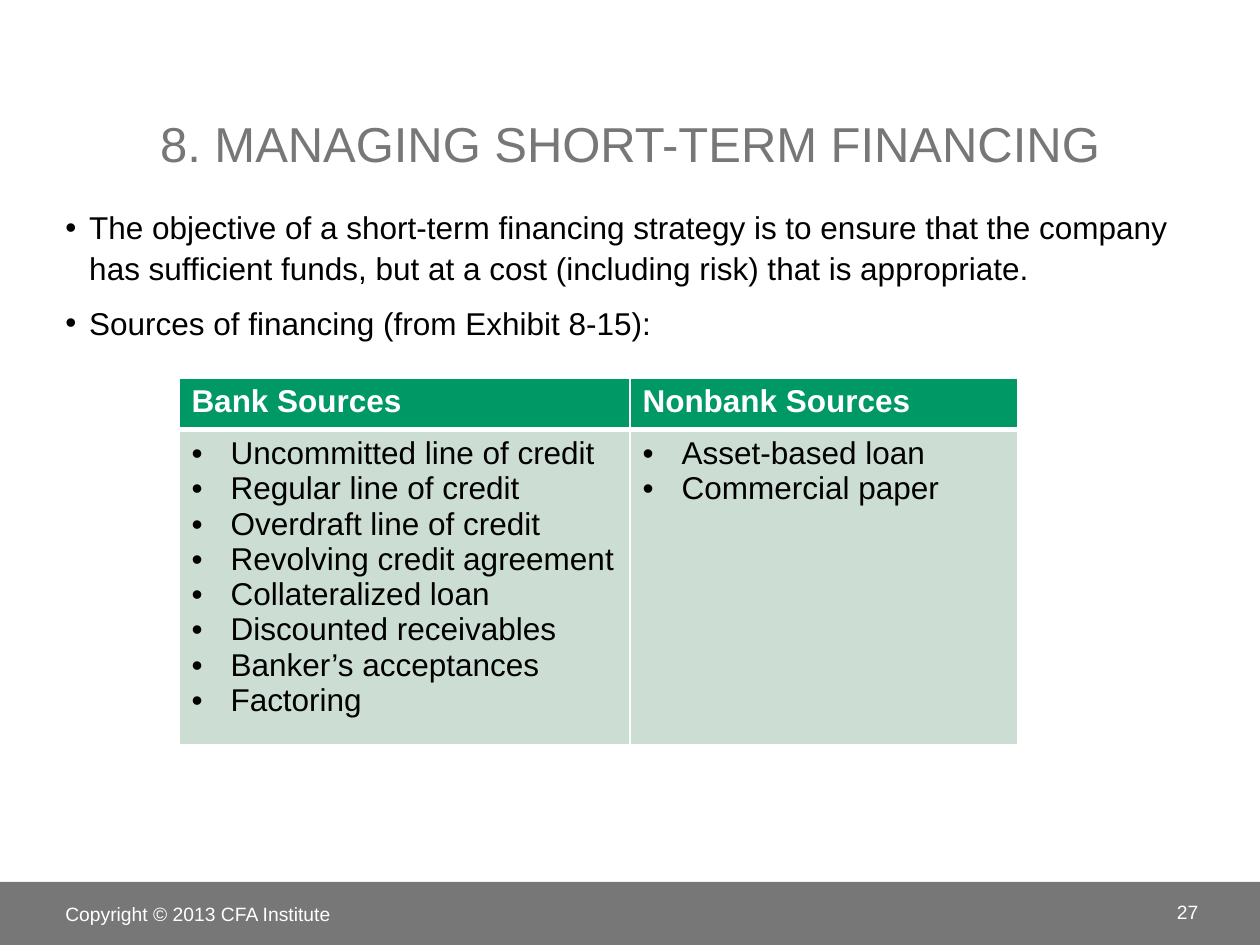
from lxml import etree
from pptx import Presentation
from pptx.dml.color import RGBColor
from pptx.enum.shapes import MSO_SHAPE
from pptx.enum.text import MSO_ANCHOR, MSO_AUTO_SIZE, PP_ALIGN
from pptx.oxml.ns import qn
from pptx.util import Inches, Pt

RECTANGLE = MSO_SHAPE.RECTANGLE
TOP, MIDDLE, BOTTOM = MSO_ANCHOR.TOP, MSO_ANCHOR.MIDDLE, MSO_ANCHOR.BOTTOM
LEFT, CENTER, RIGHT = PP_ALIGN.LEFT, PP_ALIGN.CENTER, PP_ALIGN.RIGHT

FONT = "Arial"
COLORS = {
    "gray": "777777",
    "text": "000000",
    "white": "FFFFFF",
    "header": "009966",
    "cell": "CCDED3",
}

OBJECTIVES = [
    "The objective of a short-term financing strategy is to ensure that the company "
    "has sufficient funds, but at a cost (including risk) that is appropriate.",
    "Sources of financing (from Exhibit 8-15):",
]
SOURCES = {
    "Bank Sources": [
        "Uncommitted line of credit",
        "Regular line of credit",
        "Overdraft line of credit",
        "Revolving credit agreement",
        "Collateralized loan",
        "Discounted receivables",
        "Banker’s acceptances",
        "Factoring",
    ],
    "Nonbank Sources": ["Asset-based loan", "Commercial paper"],
}


def color(name):
    return RGBColor.from_string(COLORS[name])


def add_bullet(paragraph, indent):
    """Hang a round bullet to the left of the paragraph."""
    properties = paragraph._p.get_or_add_pPr()
    properties.set("marL", str(indent))
    properties.set("indent", str(-indent))
    etree.SubElement(properties, qn("a:buFont")).set("typeface", FONT)
    etree.SubElement(properties, qn("a:buChar")).set("char", "•")


def write_text(text_frame, lines, size=18, fill="text", bold=False, align=LEFT,
               bullet_indent=None, space_before=0, line_spacing=None):
    for index, line in enumerate(lines):
        paragraph = text_frame.paragraphs[0] if index == 0 else text_frame.add_paragraph()
        paragraph.text = line
        paragraph.alignment = align
        if line_spacing:
            paragraph.line_spacing = line_spacing
        paragraph.space_before = Pt(space_before if index else 0)
        if bullet_indent:
            add_bullet(paragraph, bullet_indent)
        font = paragraph.font
        font.name, font.size, font.bold = FONT, Pt(size), bold
        font.color.rgb = color(fill)


def add_text(slide, box, lines, anchor=TOP, **text_format):
    text_frame = slide.shapes.add_textbox(*box).text_frame
    text_frame.word_wrap = True
    text_frame.vertical_anchor = anchor
    write_text(text_frame, lines, **text_format)


def set_title(slide, box, text):
    title = slide.shapes.title
    title.left, title.top, title.width, title.height = box
    title.text_frame.auto_size = MSO_AUTO_SIZE.NONE
    title.text_frame.vertical_anchor = BOTTOM
    write_text(title.text_frame, [text], size=28, fill="gray", align=CENTER)


def set_borders(cell, **widths):
    """Draw white cell borders; widths in points are keyed by side."""
    properties = cell._tc.get_or_add_tcPr()
    for position, side in enumerate(("L", "R", "T", "B")):
        line = etree.Element(qn(f"a:ln{side}"), w=str(Pt(widths.get(side, 1))))
        solid = etree.SubElement(line, qn("a:solidFill"))
        etree.SubElement(solid, qn("a:srgbClr")).set("val", COLORS["white"])
        properties.insert(position, line)


def add_sources_table(slide, box, column_widths, row_heights):
    table = slide.shapes.add_table(2, len(SOURCES), *box).table
    for row, height in zip(table.rows, row_heights):
        row.height = height
    for index, (heading, sources) in enumerate(SOURCES.items()):
        table.columns[index].width = column_widths[index]
        header, body = table.cell(0, index), table.cell(1, index)
        for cell, fill in ((header, "header"), (body, "cell")):
            cell.fill.solid()
            cell.fill.fore_color.rgb = color(fill)
        set_borders(header, B=3)
        set_borders(body, T=3)
        write_text(header.text_frame, [heading], fill="white", bold=True)
        write_text(body.text_frame, sources, bullet_indent=Inches(0.31))


def add_footer(slide, box, copyright_text, page_number):
    left, top, width, height = box
    bar = slide.shapes.add_shape(RECTANGLE, *box)
    bar.shadow.inherit = False
    bar.fill.solid()
    bar.fill.fore_color.rgb = color("gray")
    bar.line.fill.background()
    text_format = {"anchor": MIDDLE, "size": 11, "fill": "white"}
    add_text(slide, (left + Inches(0.42), top + Inches(0.03), Inches(3.17), Inches(0.44)),
             [copyright_text], **text_format)
    add_text(slide, (left + width - Inches(1.25), top + Inches(0.04), Inches(0.86), Inches(0.4)),
             [page_number], align=RIGHT, **text_format)


def main():
    presentation = Presentation()
    presentation.slide_width, presentation.slide_height = Inches(10), Inches(7.5)
    slide = presentation.slides.add_slide(presentation.slide_layouts[5])

    margin, content_width = Inches(0.42), Inches(9.16)
    add_footer(slide, (0, Inches(7), Inches(10), Inches(0.5)),
               "Copyright © 2013 CFA Institute", "27")
    set_title(slide, (margin, Inches(0.17), content_width, Inches(1.25)),
              "8. MANAGING SHORT-TERM FINANCING")
    add_text(slide, (margin, Inches(1.58), content_width, Inches(5.17)), OBJECTIVES,
             bullet_indent=Inches(0.19), space_before=8, line_spacing=1.08)
    add_sources_table(slide, (Inches(1.42), Inches(3), Inches(6.66), Inches(2.74)),
                      (Inches(3.58), Inches(3.08)), (Inches(0.41), Inches(2.33)))
    presentation.save("out.pptx")


if __name__ == "__main__":
    main()
